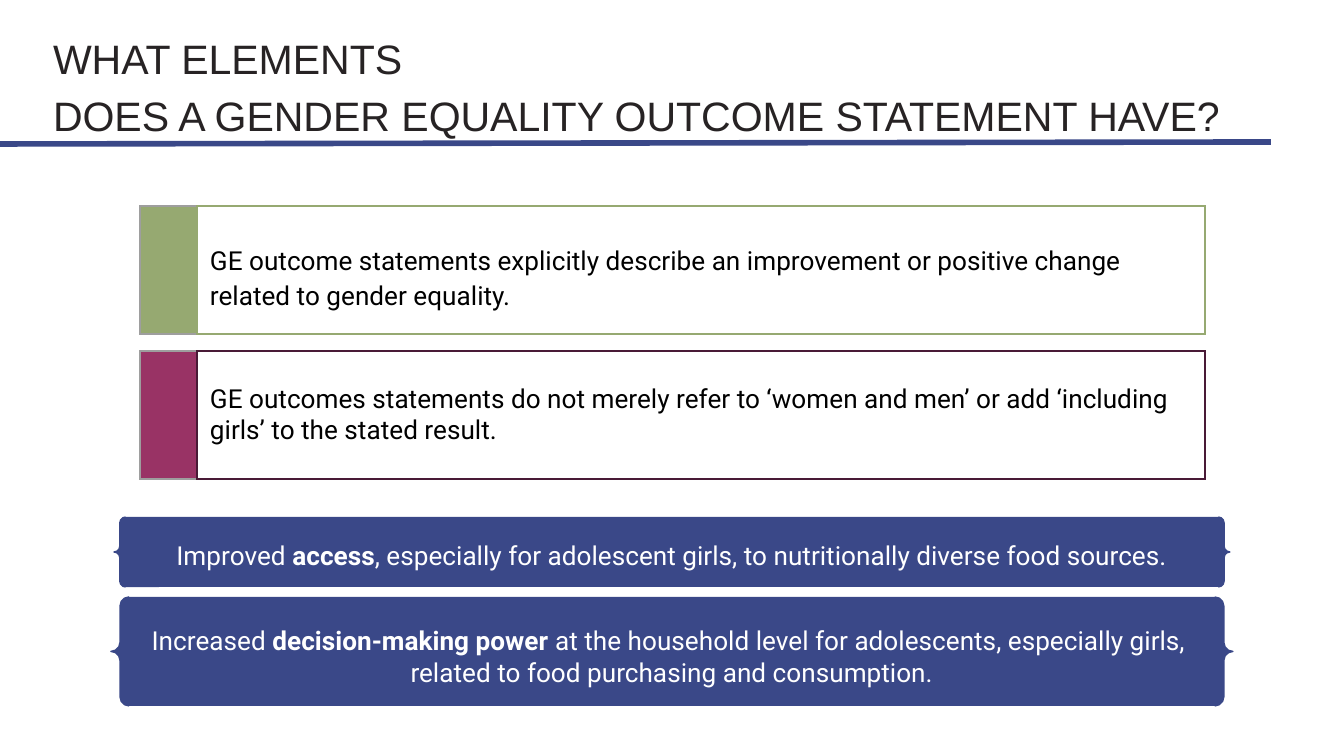
from dataclasses import dataclass

from lxml import etree
from pptx import Presentation
from pptx import util as u
from pptx.dml.color import RGBColor
from pptx.enum import shapes, text
from pptx.oxml.ns import qn

SCALE = 914400 / 134.4


@dataclass(frozen=True)
class Theme:
    ink: str = "272324"
    black: str = "000000"
    white: str = "FFFFFF"
    blue: str = "3A4888"
    green: str = "96A971"
    plum: str = "993365"
    dark_plum: str = "491A36"
    grey: str = "9E9E9E"
    heading: str = "Arial"
    body: str = "Roboto"
    title_size: int = 22
    body_size: int = 14
    hairline: float = 0.75
    rule: int = 3


T = Theme()


def px(n):
    return u.Emu(round(n * SCALE))


def box(*lengths):
    return [px(n) for n in lengths]


def rgb(color):
    return RGBColor.from_string(color)


def format_run(r, font, size, color, bold=False):
    r.font.name = font
    r.font.size = u.Pt(size)
    r.font.color.rgb = rgb(color)
    r.font.bold = bold


def set_margins(target, inset=13):
    target.margin_left = target.margin_right = px(inset)
    target.margin_top = target.margin_bottom = px(inset)


def add_title(s, lines):
    sp = s.shapes.title
    sp.left, sp.top, sp.width, sp.height = box(40, 24, 1231, 118)
    tf = sp.text_frame
    tf.text = "\n".join(lines)
    tf.word_wrap = True
    tf.auto_size = text.MSO_AUTO_SIZE.NONE
    tf.vertical_anchor = text.MSO_ANCHOR.MIDDLE
    set_margins(tf)
    for p in tf.paragraphs:
        p.alignment = text.PP_ALIGN.LEFT
        p.line_spacing = 1.15
        format_run(p.runs[0], T.heading, T.title_size, T.ink)


def add_rule(s):
    cn = s.shapes.add_connector(shapes.MSO_CONNECTOR.STRAIGHT, *box(0, 144, 1271, 142))
    cn.line.color.rgb = rgb(T.blue)
    cn.line.width = u.Pt(T.rule)
    etree.SubElement(cn._element.spPr, qn("a:effectLst"))


def set_borders(cell, left, right, top, bottom):
    tc_pr = cell._tc.get_or_add_tcPr()
    sides = zip(("a:lnL", "a:lnR", "a:lnT", "a:lnB"), (left, right, top, bottom))
    for i, (tag, color) in enumerate(sides):
        ln = etree.Element(qn(tag), w=str(u.Pt(T.hairline)))
        fill = etree.SubElement(ln, qn("a:solidFill"))
        etree.SubElement(fill, qn("a:srgbClr"), val=color)
        tc_pr.insert(i, ln)


def add_statement(s, top, words, fill, border, spacing=1.0, drop=0):
    table = s.shapes.add_table(1, 2, *box(140, top, 1065, 128)).table
    table.first_row = table.horz_banding = False
    table.columns[0].width, table.columns[1].width = box(57, 1008)
    tab, cell = table.cell(0, 0), table.cell(0, 1)
    tab.fill.solid()
    tab.fill.fore_color.rgb = rgb(fill)
    cell.fill.background()
    set_borders(tab, T.grey, border, T.grey, T.grey)
    set_borders(cell, border, border, border, border)
    set_margins(cell)
    cell.margin_top = px(13 + drop)
    cell.vertical_anchor = text.MSO_ANCHOR.MIDDLE
    p = cell.text_frame.paragraphs[0]
    p.text = words
    p.line_spacing = spacing
    format_run(p.runs[0], T.body, T.body_size, T.black)


def add_example(s, bounds, lines):
    sp = s.shapes.add_shape(shapes.MSO_SHAPE.DOUBLE_BRACE, *box(*bounds))
    sp.shadow.inherit = False
    sp.fill.solid()
    sp.fill.fore_color.rgb = rgb(T.blue)
    sp.line.color.rgb = rgb(T.blue)
    sp.line.width = u.Pt(T.hairline)
    tf = sp.text_frame
    tf.word_wrap = True
    tf.vertical_anchor = text.MSO_ANCHOR.MIDDLE
    set_margins(tf)
    for i, line in enumerate(lines):
        p = tf.add_paragraph() if i else tf.paragraphs[0]
        p.alignment = text.PP_ALIGN.CENTER
        for words, bold in line:
            r = p.add_run()
            r.text = words
            format_run(r, T.body, T.body_size, T.white, bold)


def main():
    prs = Presentation()
    prs.slide_width, prs.slide_height = box(1344, 756)
    s = prs.slides.add_slide(prs.slide_layouts[5])
    add_title(s, ["WHAT ELEMENTS", "DOES A GENDER EQUALITY OUTCOME STATEMENT HAVE?"])
    add_statement(
        s, 206,
        "GE outcome statements explicitly describe an improvement or positive change "
        "related to gender equality.",
        T.green, T.green, spacing=1.15, drop=13)
    add_rule(s)
    add_statement(
        s, 351,
        "GE outcomes statements do not merely refer to ‘women and men’ or add "
        "‘including girls’ to the stated result.",
        T.plum, T.dark_plum)
    add_example(s, (114, 517, 1116, 70), [
        [("Improved ", False), ("access", True),
         (", especially for adolescent girls, to nutritionally diverse food sources.", False)],
    ])
    add_example(s, (111, 597, 1122, 109), [
        [("Increased ", False), ("decision-making power ", True),
         ("at the household level for adolescents, especially girls, ", False)],
        [("related to food purchasing and consumption.", False)],
    ])
    prs.save("out.pptx")


if __name__ == "__main__":
    main()
